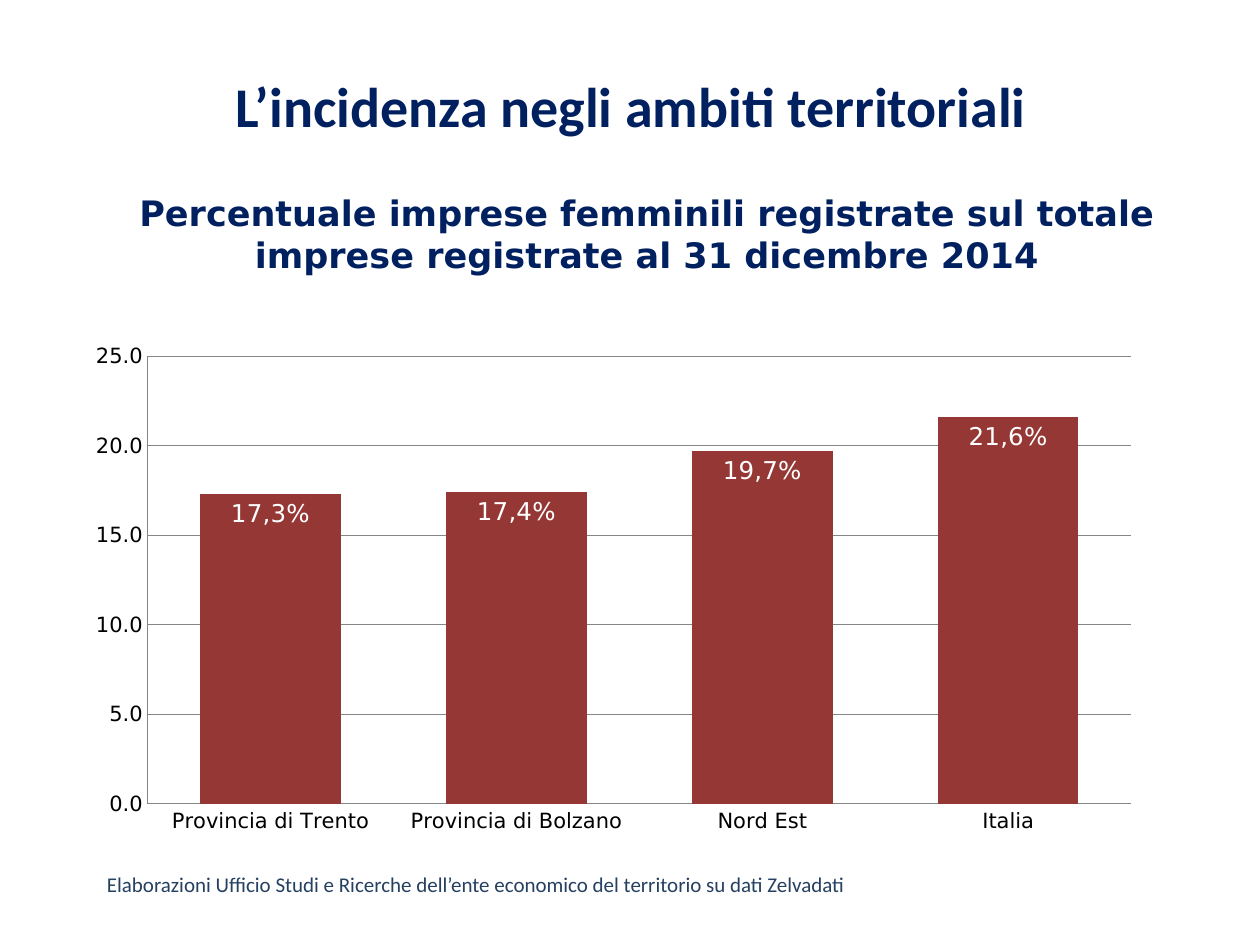
import lxml.etree
import pptx
import pptx.chart.data
import pptx.dml.color
import pptx.enum.chart
import pptx.enum.text
import pptx.oxml.ns
import pptx.util

Inches = pptx.util.Inches
Pt = pptx.util.Pt
ALIGN = pptx.enum.text.PP_ALIGN
ANCHOR = pptx.enum.text.MSO_ANCHOR

COLORS = {"navy": "002060", "slate": "254061", "bar": "953735",
          "grid": "868686", "black": "000000", "white": "FFFFFF"}

# text, box (left, top, width, height), size, font, colour, bold, alignment, anchor
TEXTS = [
    ("L’incidenza negli ambiti territoriali", (0.51, 0.21, 9, 1.25),
     32, "Calibri", "navy", True, ALIGN.CENTER, ANCHOR.MIDDLE),
    ("Percentuale imprese femminili registrate sul totale imprese registrate al 31 dicembre 2014",
     (0.41, 1.47, 9.45, 0.77), 20, "DejaVu Sans", "navy", True, ALIGN.CENTER, ANCHOR.TOP),
    ("Elaborazioni Ufficio Studi e Ricerche dell’ente economico del territorio su dati Zelvadati",
     (0.75, 6.87, 8.74, 0.3), 12, "Calibri", "slate", False, ALIGN.LEFT, ANCHOR.TOP),
]

SHARES = {"Provincia di Trento": 17.3, "Provincia di Bolzano": 17.4,
          "Nord Est": 19.7, "Italia": 21.6}
CHART_BOX = (0.59, 2.65, 8.56, 4.05)
PLOT_BOX = (1.17, 2.83, 7.81, 3.55)


def rgb(name):
    return pptx.dml.color.RGBColor.from_string(COLORS[name])


def style_font(font, size, name, color, bold=False):
    font.size, font.name, font.bold = Pt(size), name, bold
    font.color.rgb = rgb(color)


def add_text(slide, text, box, size, font, color, bold, alignment, anchor):
    frame = slide.shapes.add_textbox(*map(Inches, box)).text_frame
    frame.word_wrap = True
    frame.vertical_anchor = anchor
    paragraph = frame.paragraphs[0]
    paragraph.alignment = alignment
    run = paragraph.add_run()
    run.text = text
    style_font(run.font, size, font, color, bold)


def place_plot(chart):
    """Fix the inner plot area, as fractions of the chart frame."""
    left, top, width, height = CHART_BOX
    x, y, w, h = PLOT_BOX
    settings = {"layoutTarget": "inner", "xMode": "edge", "yMode": "edge",
                "x": (x - left) / width, "y": (y - top) / height,
                "w": w / width, "h": h / height}
    qn = pptx.oxml.ns.qn
    plot_area = chart.element.find(".//" + qn("c:plotArea"))
    for layout in plot_area.findall(qn("c:layout")):
        plot_area.remove(layout)
    layout = lxml.etree.Element(qn("c:layout"))
    manual = lxml.etree.SubElement(layout, qn("c:manualLayout"))
    for tag, value in settings.items():
        text = value if isinstance(value, str) else f"{value:.3f}"
        lxml.etree.SubElement(manual, qn("c:" + tag)).set("val", text)
    plot_area.insert(0, layout)


def style_axes(chart):
    for axis in (chart.category_axis, chart.value_axis):
        axis.major_tick_mark = axis.minor_tick_mark = pptx.enum.chart.XL_TICK_MARK.NONE
        axis.format.line.color.rgb = rgb("grid")
        style_font(axis.tick_labels.font, 12, "DejaVu Sans", "black")
    value_axis = chart.value_axis
    value_axis.minimum_scale, value_axis.maximum_scale, value_axis.major_unit = 0, 25, 5
    value_axis.has_major_gridlines = True
    value_axis.major_gridlines.format.line.color.rgb = rgb("grid")
    value_axis.tick_labels.number_format = "0.0"
    value_axis.tick_labels.number_format_is_linked = False


def add_share_chart(slide):
    data = pptx.chart.data.CategoryChartData(number_format="0.0")
    data.categories = list(SHARES)
    data.add_series("Series 1", list(SHARES.values()))
    chart = slide.shapes.add_chart(pptx.enum.chart.XL_CHART_TYPE.COLUMN_CLUSTERED,
                                   *map(Inches, CHART_BOX), data).chart
    chart.has_legend = chart.has_title = False
    style_font(chart.font, 10, "Calibri", "black")
    style_axes(chart)
    place_plot(chart)

    plot = chart.plots[0]
    plot.gap_width, plot.overlap, plot.vary_by_categories = 75, 40, False
    series = plot.series[0]
    series.format.fill.solid()
    series.format.fill.fore_color.rgb = rgb("bar")

    inside_end = pptx.enum.chart.XL_LABEL_POSITION.INSIDE_END
    labels = series.data_labels
    labels.show_value, labels.position = True, inside_end
    labels.number_format, labels.number_format_is_linked = "0.0", False
    style_font(labels.font, 14, "DejaVu Sans", "white", True)
    for index, share in enumerate(SHARES.values()):
        label = series.points[index].data_label
        run = label.text_frame.paragraphs[0].add_run()
        run.text = f"{share}%".replace(".", ",")
        style_font(run.font, 14, "DejaVu Sans", "white")
        label.position = inside_end


def main():
    presentation = pptx.Presentation()
    presentation.slide_width, presentation.slide_height = Inches(10), Inches(7.5)
    slide = presentation.slides.add_slide(presentation.slide_layouts[6])
    add_share_chart(slide)
    for entry in TEXTS:
        add_text(slide, *entry)
    presentation.save("out.pptx")


if __name__ == "__main__":
    main()
